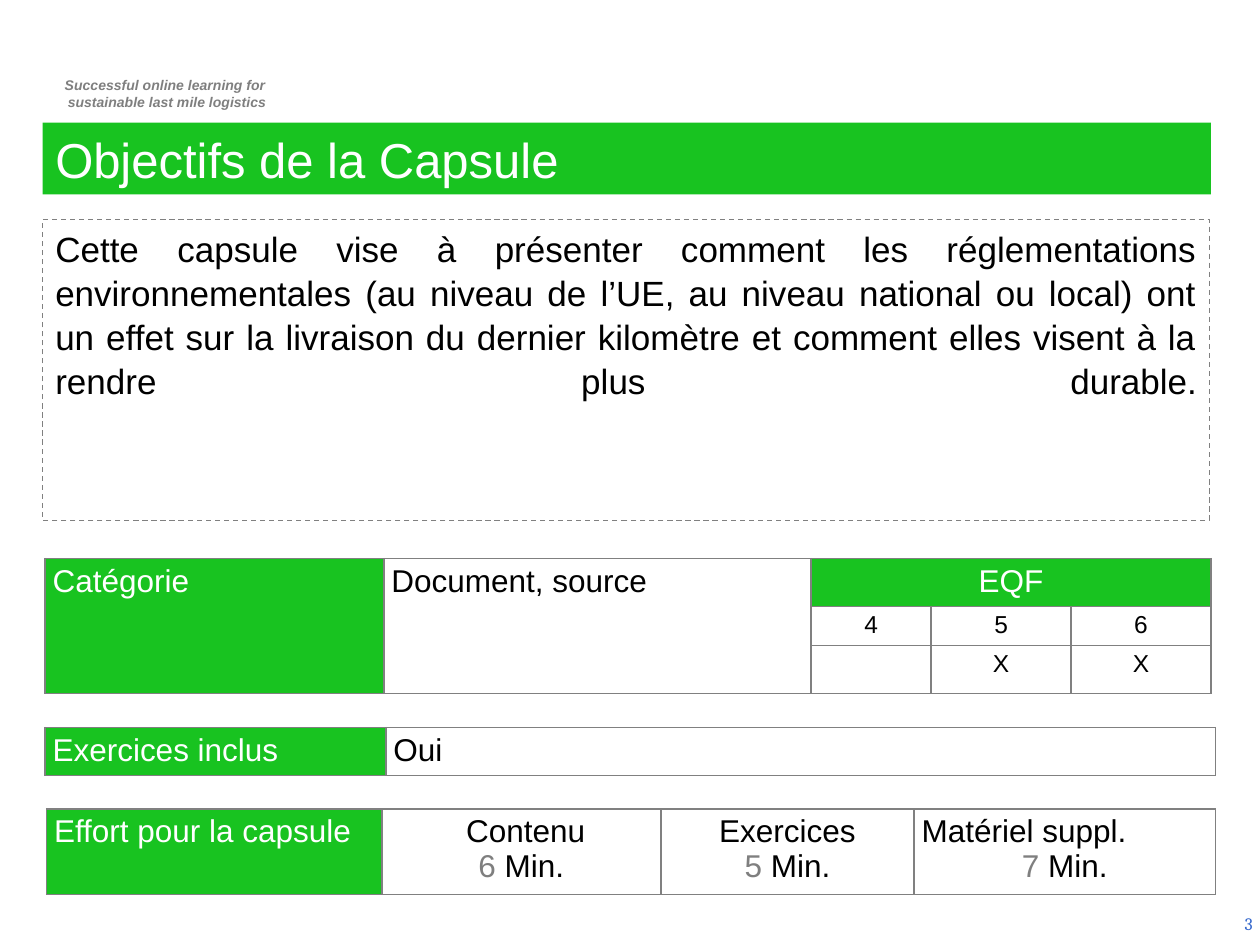
import pptx
import pptx.util
import pptx.dml.color
import pptx.enum.dml
import pptx.enum.text
import pptx.oxml
import pptx.oxml.ns

Cm = pptx.util.Cm
Pt = pptx.util.Pt
ALIGN = pptx.enum.text.PP_ALIGN
ANCHOR = pptx.enum.text.MSO_ANCHOR
COLORS = {
    "green": "18C320",
    "grey": "808080",
    "muted": "7F7F7F",
    "black": "000000",
    "white": "FFFFFF",
    "number": "3366CC",
}


def rgb(name):
    return pptx.dml.color.RGBColor.from_string(COLORS[name])


def apply(target, values):
    for name, value in values.items():
        setattr(target, name, value)


def place(shape, box):
    apply(shape, dict(zip(("left", "top", "width", "height"), map(Cm, box))))


def write(frame, lines, size, align, color="black", font="Arial", **style):
    for index, line in enumerate(lines):
        paragraph = frame.paragraphs[0] if index == 0 else frame.add_paragraph()
        apply(paragraph, {"alignment": align, "space_before": Pt(0)})
        for words, tint in [(line, color)] if isinstance(line, str) else line:
            run = paragraph.add_run()
            run.text = words
            apply(run.font, {"name": font, "size": Pt(size), **style})
            run.font.color.rgb = rgb(tint)


def add_tagline(slide, box):
    tagline = slide.shapes.add_textbox(*map(Cm, box))
    tagline.text_frame.word_wrap = True
    lines = ["Successful online learning for ", "sustainable last mile logistics"]
    write(tagline.text_frame, lines, 8, ALIGN.CENTER, "muted", bold=True, italic=True)
    for paragraph in tagline.text_frame.paragraphs:
        paragraph._p.get_or_add_pPr().set("marL", str(Cm(0.1)))


def add_page_number(slide, box):
    number = slide.shapes.add_textbox(*map(Cm, box))
    apply(number.text_frame, {"word_wrap": True, "vertical_anchor": ANCHOR.MIDDLE})
    write(number.text_frame, ["3"], 10, ALIGN.RIGHT, "number", "Cambria")


def fill_heading(heading, box):
    place(heading, box)
    heading.fill.solid()
    heading.fill.fore_color.rgb = rgb("green")
    apply(heading.text_frame, {
        "auto_size": pptx.enum.text.MSO_AUTO_SIZE.NONE,
        "vertical_anchor": ANCHOR.MIDDLE,
    })
    write(heading.text_frame, ["Objectifs de la Capsule"], 28, ALIGN.LEFT, "white")


def fill_objective(objective, box):
    place(objective, box)
    objective.line.color.rgb = rgb("grey")
    apply(objective.line, {
        "width": Pt(0.75),
        "dash_style": pptx.enum.dml.MSO_LINE.DASH,
    })
    objective.text_frame.auto_size = pptx.enum.text.MSO_AUTO_SIZE.NONE
    paragraph = objective.text_frame.paragraphs[0]
    properties = paragraph._p.get_or_add_pPr()
    apply(paragraph, {"line_spacing": 1.05})
    apply_indent = {"marL": "0", "indent": "0"}
    for name, value in apply_indent.items():
        properties.set(name, value)
    properties.append(pptx.oxml.parse_xml(
        f'<a:buNone {pptx.oxml.ns.nsdecls("a")}/>'))
    write(objective.text_frame, [
        "Cette capsule vise à présenter comment les réglementations "
        "environnementales (au niveau de l’UE, au niveau national ou local) "
        "ont un effet sur la livraison du dernier kilomètre et comment elles "
        "visent à la rendre plus durable."], 20, ALIGN.JUSTIFY)
    paragraph.add_line_break()


def add_grid(slide, left, top, widths, heights):
    frame = slide.shapes.add_table(
        len(heights), len(widths), Cm(left), Cm(top),
        Cm(sum(widths)), Cm(sum(heights)))
    grid = frame.table
    apply(grid, {"first_row": False, "horz_banding": False})
    for column, width in zip(grid.columns, widths):
        column.width = Cm(width)
    for row, height in zip(grid.rows, heights):
        row.height = Cm(height)
    for cell in grid.iter_cells():
        apply(cell, {"margin_left": Cm(0.15), "margin_right": Cm(0.15),
                     "margin_top": Cm(0.1), "margin_bottom": Cm(0.1)})
        properties = cell._tc.get_or_add_tcPr()
        for side in ("lnL", "lnR", "lnT", "lnB"):
            properties.append(pptx.oxml.parse_xml(
                f'<a:{side} {pptx.oxml.ns.nsdecls("a")} w="12700"><a:solidFill>'
                f'<a:srgbClr val="{COLORS["grey"]}"/></a:solidFill></a:{side}>'))
        cell.fill.background()
    return grid


def write_label(cell, label, align=ALIGN.JUSTIFY):
    cell.fill.solid()
    cell.fill.fore_color.rgb = rgb("green")
    write(cell.text_frame, [label], 18, align, "white")


def add_category(slide, left, top):
    grid = add_grid(slide, left, top, [6.83, 8.61, 2.42, 2.82, 2.82],
                    [0.93, 0.79, 0.95])
    for column in (0, 1):
        grid.cell(0, column).merge(grid.cell(2, column))
    grid.cell(0, 2).merge(grid.cell(0, 4))
    write_label(grid.cell(0, 0), "Catégorie")
    write(grid.cell(0, 1).text_frame, ["Document, source"], 18, ALIGN.JUSTIFY)
    write_label(grid.cell(0, 2), "EQF", ALIGN.CENTER)
    for column, (level, mark) in enumerate(zip("456", ["", "X", "X"]), start=2):
        write(grid.cell(1, column).text_frame, [level], 14, ALIGN.CENTER)
        if mark:
            write(grid.cell(2, column).text_frame, [mark], 14, ALIGN.CENTER)


def add_exercises(slide, left, top):
    grid = add_grid(slide, left, top, [6.87, 16.72], [0.95])
    write_label(grid.cell(0, 0), "Exercices inclus")
    write(grid.cell(0, 1).text_frame, ["Oui"], 18, ALIGN.JUSTIFY)


def add_effort(slide, left, top):
    grid = add_grid(slide, left, top, [6.76, 5.62, 5.11, 6.07], [1.7])
    write_label(grid.cell(0, 0), "Effort pour la capsule")
    efforts = [(" Contenu", 6), ("Exercices", 5), ("Matériel suppl.", 7)]
    for column, (activity, minutes) in enumerate(efforts, start=1):
        duration = [(f"{minutes} ", "muted"), ("Min.", "black")]
        write(grid.cell(0, column).text_frame, [activity, duration], 18, ALIGN.CENTER)
    grid.cell(0, 3).text_frame.paragraphs[0].alignment = ALIGN.LEFT


def main():
    deck = pptx.Presentation()
    apply(deck, {"slide_width": Cm(25.4), "slide_height": Cm(19.05)})
    slide = deck.slides.add_slide(deck.slide_layouts[1])
    add_tagline(slide, (0.74, 1.42, 5.16, 0.94))
    add_page_number(slide, (19.58, 18.11, 5.92, 1.02))
    fill_heading(slide.shapes.title, (0.86, 2.47, 23.55, 1.45))
    fill_objective(slide.placeholders[1], (0.86, 4.42, 23.52, 6.07))
    add_category(slide, 0.91, 11.26)
    add_exercises(slide, 0.91, 14.67)
    add_effort(slide, 0.94, 16.31)
    deck.save("out.pptx")


if __name__ == "__main__":
    main()
